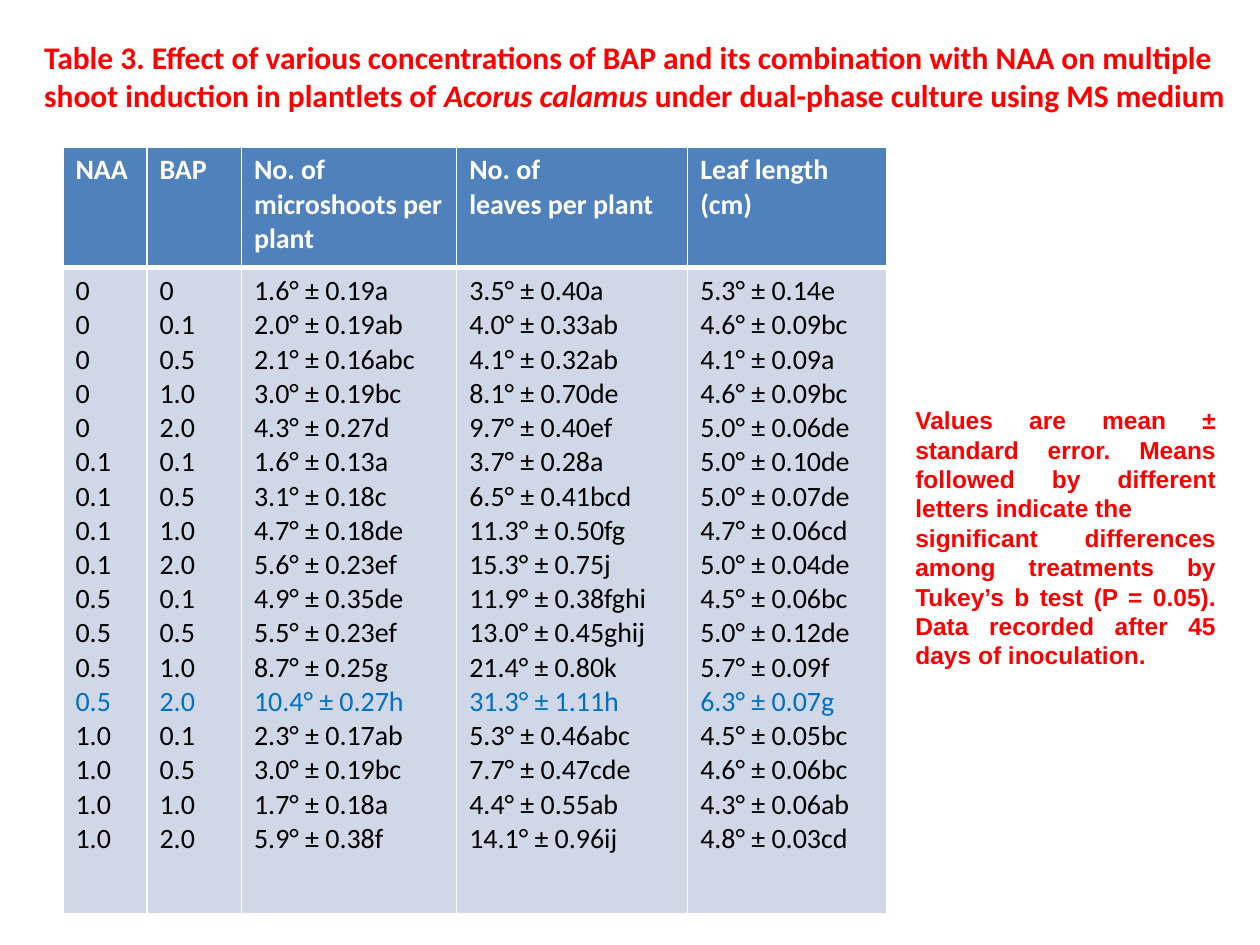
from lxml.etree import SubElement
from pptx import Presentation
from pptx.dml.color import RGBColor
from pptx.enum.text import MSO_ANCHOR, MSO_AUTO_SIZE, PP_ALIGN
from pptx.oxml.ns import qn
from pptx.util import Inches, Pt

COLORS = {"alert": "FF0000", "header": "4F81BD", "body": "D0D8E8",
          "rule": "FFFFFF", "text": "000000", "best": "0070C0"}
FORMATS = {
    "title": {"name": "Calibri", "size": Pt(18), "bold": True},
    "header": {"name": "Calibri", "size": Pt(16), "bold": True},
    "body": {"name": "Calibri", "size": Pt(16), "bold": False},
    "note": {"name": "Arial", "size": Pt(14), "bold": True},
}
FRAME = {"word_wrap": True, "auto_size": MSO_AUTO_SIZE.SHAPE_TO_FIT_TEXT,
         "vertical_anchor": MSO_ANCHOR.TOP}

TITLE = [
    ("Table 3. Effect of various concentrations of BAP and its combination "
     "with NAA on multiple shoot induction in plantlets of ", False),
    ("Acorus calamus ", True),
    ("under dual-phase culture using MS medium", False),
]
HEADERS = [["NAA"], ["BAP"], ["No. of", "microshoots per plant"],
           ["No. of", "leaves per plant"], ["Leaf length (cm)"]]
# NAA, BAP, then mean and standard error of microshoots, leaves and leaf length
TREATMENTS = """
0 0 1.6 0.19a 3.5 0.40a 5.3 0.14e
0 0.1 2.0 0.19ab 4.0 0.33ab 4.6 0.09bc
0 0.5 2.1 0.16abc 4.1 0.32ab 4.1 0.09a
0 1.0 3.0 0.19bc 8.1 0.70de 4.6 0.09bc
0 2.0 4.3 0.27d 9.7 0.40ef 5.0 0.06de
0.1 0.1 1.6 0.13a 3.7 0.28a 5.0 0.10de
0.1 0.5 3.1 0.18c 6.5 0.41bcd 5.0 0.07de
0.1 1.0 4.7 0.18de 11.3 0.50fg 4.7 0.06cd
0.1 2.0 5.6 0.23ef 15.3 0.75j 5.0 0.04de
0.5 0.1 4.9 0.35de 11.9 0.38fghi 4.5 0.06bc
0.5 0.5 5.5 0.23ef 13.0 0.45ghij 5.0 0.12de
0.5 1.0 8.7 0.25g 21.4 0.80k 5.7 0.09f
0.5 2.0 10.4 0.27h 31.3 1.11h 6.3 0.07g
1.0 0.1 2.3 0.17ab 5.3 0.46abc 4.5 0.05bc
1.0 0.5 3.0 0.19bc 7.7 0.47cde 4.6 0.06bc
1.0 1.0 1.7 0.18a 4.4 0.55ab 4.3 0.06ab
1.0 2.0 5.9 0.38f 14.1 0.96ij 4.8 0.03cd
"""
BEST_TREATMENT = 12
NOTE = [
    "Values are mean ± standard error. Means followed by different letters "
    "indicate the",
    "significant differences among treatments by Tukey’s b test (P = 0.05). "
    "Data recorded after 45 days of inoculation.",
]


def treatment_columns():
    """Turn the treatment lines into one list of entries per table column."""
    rows = []
    for line in TREATMENTS.split("\n")[1:-1]:
        naa, bap, *results = line.split()
        rows.append([naa, bap] + [f"{mean}° ± {error}" for mean, error
                                  in zip(results[::2], results[1::2])])
    return [list(column) for column in zip(*rows)]


class SlideBuilder:
    """Holds the style and the slide; lengths are in a 120 by 90 grid."""

    def __init__(self, deck):
        self.column = deck.slide_width / 120
        self.row = deck.slide_height / 90
        self.slide = deck.slides.add_slide(deck.slide_layouts[5])

    def box(self, left, top, width, height):
        return (round(left * self.column), round(top * self.row),
                round(width * self.column), round(height * self.row))

    def add_text(self, paragraph, text, style, color, italic=False):
        run = paragraph.add_run()
        run.text = text
        for key, value in FORMATS[style].items():
            setattr(run.font, key, value)
        run.font.italic = italic
        run.font.color.rgb = RGBColor.from_string(COLORS[color])

    def add_lines(self, frame, lines, style, color, special=None, align=None):
        for index, line in enumerate(lines):
            paragraph = frame.add_paragraph() if index else frame.paragraphs[0]
            paragraph.alignment = align
            self.add_text(paragraph, line, style,
                          "best" if index == special else color)

    def set_frame(self, frame):
        for key, value in FRAME.items():
            setattr(frame, key, value)

    def title(self, parts, *place):
        title = self.slide.shapes.title
        title.left, title.top, title.width, title.height = self.box(*place)
        self.set_frame(title.text_frame)
        paragraph = title.text_frame.paragraphs[0]
        paragraph.alignment = PP_ALIGN.LEFT
        for text, italic in parts:
            self.add_text(paragraph, text, "title", "alert", italic)

    def note(self, lines, *place):
        frame = self.slide.shapes.add_textbox(*self.box(*place)).text_frame
        self.set_frame(frame)
        self.add_lines(frame, lines, "note", "alert", align=PP_ALIGN.JUSTIFY)

    def table(self, headers, columns, left, top, widths, heights):
        place = self.box(left, top, sum(widths), sum(heights))
        table = self.slide.shapes.add_table(2, len(widths), *place).table
        table.horz_banding = False
        for column, width in zip(table.columns, widths):
            column.width = round(width * self.column)
        for row, height in zip(table.rows, heights):
            row.height = round(height * self.row)
        for index, (header, entries) in enumerate(zip(headers, columns)):
            head, body = table.cell(0, index), table.cell(1, index)
            self.style_cell(head, "header", thick="lnB")
            self.style_cell(body, "body", thick="lnT")
            self.add_lines(head.text_frame, header, "header", "rule")
            self.add_lines(body.text_frame, entries, "body", "text",
                           special=BEST_TREATMENT)

    def style_cell(self, cell, fill, thick):
        """Draw the cell's borders, one of them thick, and fill it."""
        properties = cell._tc.get_or_add_tcPr()
        for side in ("lnL", "lnR", "lnT", "lnB"):
            width = Pt(3 if side == thick else 1)
            border = SubElement(properties, qn(f"a:{side}"), w=str(int(width)))
            solid = SubElement(border, qn("a:solidFill"))
            SubElement(solid, qn("a:srgbClr"), val=COLORS["rule"])
        cell.fill.solid()
        cell.fill.fore_color.rgb = RGBColor.from_string(COLORS[fill])


def main():
    deck = Presentation()
    deck.slide_width, deck.slide_height = Inches(10), Inches(7.5)
    builder = SlideBuilder(deck)
    builder.title(TITLE, 3, 3, 117, 8.5)
    builder.table(HEADERS, treatment_columns(), 6, 14,
                  widths=[8, 9, 20.5, 22, 19], heights=[11.5, 61.5])
    builder.note(NOTE, 86, 38, 31, 26.6)
    deck.save("out.pptx")


if __name__ == "__main__":
    main()
